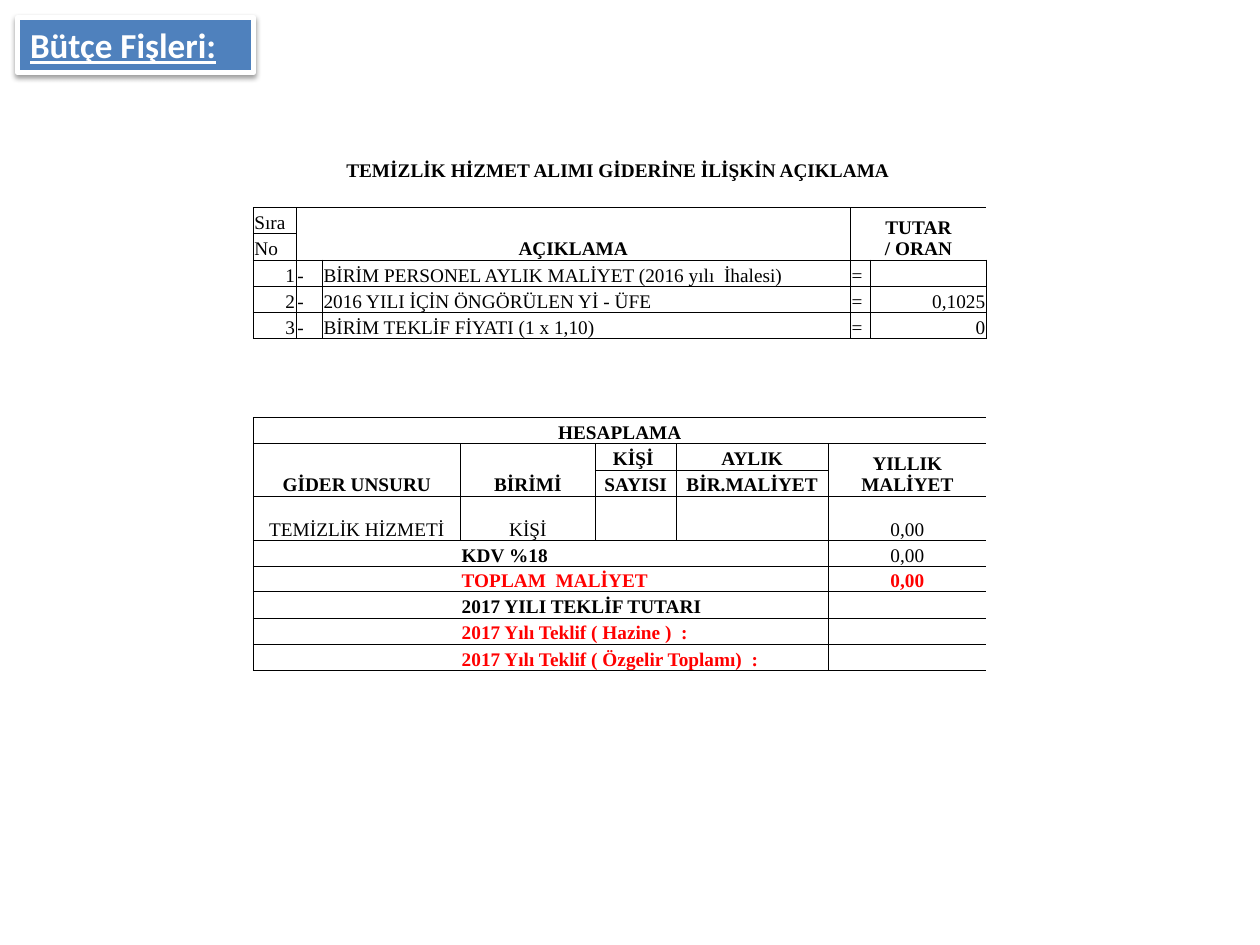
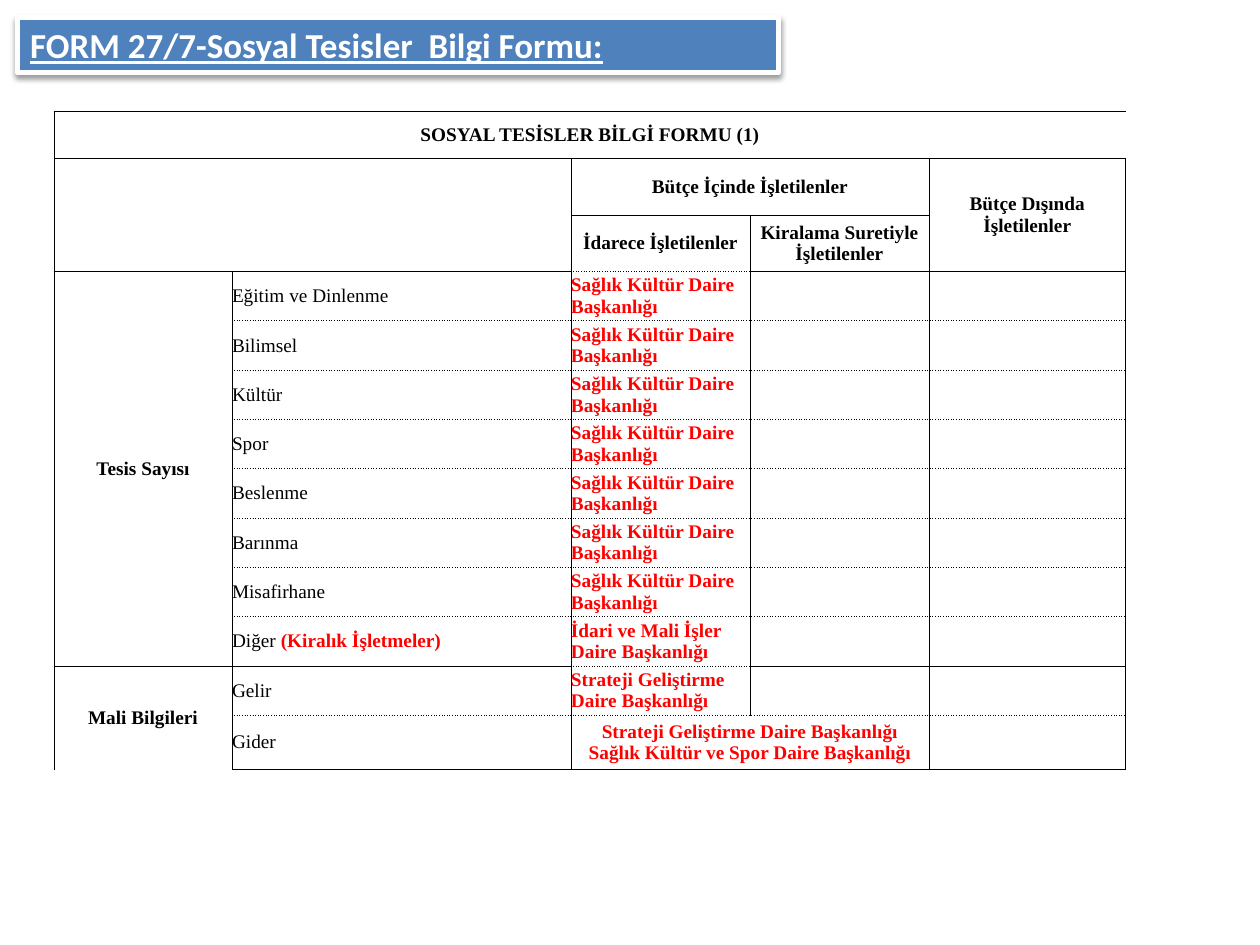
import lxml.etree
import pptx
import pptx.dml.color
import pptx.enum.text
import pptx.oxml
import pptx.oxml.ns
import pptx.util

Pt = pptx.util.Pt
qn = pptx.oxml.ns.qn
Align = pptx.enum.text.PP_ALIGN
Anchor = pptx.enum.text.MSO_ANCHOR

NO_GRID_STYLE = "{2D5ABB26-0587-4C30-8999-92F81FD0307C}"
BANNER_SHADOW = (
    '<a:effectLst %s><a:outerShdw blurRad="39370" dist="20320" dir="5400000" rotWithShape="0">'
    '<a:srgbClr val="000000"><a:alpha val="38000"/></a:srgbClr></a:outerShdw></a:effectLst>'
    % pptx.oxml.ns.nsdecls("a"))


def color(value):
    return pptx.dml.color.RGBColor.from_string(value)


class Page:
    """Holds the shared style, the current slide and its current table."""
    blue, white, black, red = "4F81BD", "FFFFFF", "000000", "FF0000"
    title_font, title_size = "Calibri", 20
    table_font, table_size = "Times New Roman", 11
    border_width = 0.5

    def __init__(self, deck):
        self.slide = deck.slides.add_slide(deck.slide_layouts[5])
        self.table = None
        self.anchor = Anchor.MIDDLE
        self.inset = 0

    def style(self, span, name, size, tint, bold):
        span.font.name = name
        span.font.size = Pt(size)
        span.font.bold = bold
        span.font.color.rgb = color(tint)

    def title(self, text, width):
        box = self.slide.shapes.title
        box.left, box.top, box.width, box.height = Pt(10), Pt(10), Pt(width), Pt(31.5)
        box.fill.solid()
        box.fill.fore_color.rgb = color(self.blue)
        box.line.color.rgb = color(self.white)
        box.line.width = Pt(3)
        box._element.spPr.append(pptx.oxml.parse_xml(BANNER_SHADOW))
        frame = box.text_frame
        frame.text = text
        frame.word_wrap = True
        frame.auto_size = pptx.enum.text.MSO_AUTO_SIZE.NONE
        frame.vertical_anchor = Anchor.TOP
        para = frame.paragraphs[0]
        para.alignment = Align.LEFT
        span = para.runs[0]
        self.style(span, self.title_font, self.title_size, self.white, True)
        span.font.underline = True

    def grid(self, left, top, widths, heights, anchor, inset):
        """Start a plain table without fills or borders."""
        self.anchor, self.inset = anchor, inset
        holder = self.slide.shapes.add_table(
            len(heights), len(widths), Pt(left), Pt(top), Pt(sum(widths)), Pt(sum(heights)))
        self.table = holder.table
        self.table.first_row = self.table.horz_banding = False
        self.table._tbl.tblPr.find(qn("a:tableStyleId")).text = NO_GRID_STYLE
        for column, width in zip(self.table.columns, widths):
            column.width = Pt(width)
        for row, height in zip(self.table.rows, heights):
            row.height = Pt(height)
        for cell in self.table.iter_cells():
            cell.fill.background()
            cell.vertical_anchor = anchor
            cell.margin_left = cell.margin_right = cell.margin_top = Pt(inset)
            cell.margin_bottom = 0
            end = lxml.etree.SubElement(cell.text_frame.paragraphs[0]._p, qn("a:endParaRPr"))
            end.set("sz", str(self.table_size * 100))

    def put(self, row, col, text="", rows=1, cols=1, align=Align.CENTER,
            bold=True, tint=black, framed=True):
        cell = self.table.cell(row, col)
        if rows * cols > 1:
            cell.merge(self.table.cell(row + rows - 1, col + cols - 1))
        if text:
            para = cell.text_frame.paragraphs[0]
            para.text = text
            para.alignment = align
            for span in para.runs:
                self.style(span, self.table_font, self.table_size, tint, bold)
        if framed:
            self.frame(row, col, rows, cols)
        return cell

    def frame(self, row, col, rows=1, cols=1, top="solid", bottom="solid"):
        """Draw the outer edges of a block of cells."""
        for r in range(row, row + rows):
            for c in range(col, col + cols):
                edges = (("L", c == col, "solid"), ("R", c == col + cols - 1, "solid"),
                         ("T", r == row, top), ("B", r == row + rows - 1, bottom))
                shown = [(side, dash) for side, outer, dash in edges if outer]
                self.border(self.table.cell(r, c), shown)

    def border(self, cell, edges):
        properties = cell._tc.get_or_add_tcPr()
        for place, (side, dash) in enumerate(edges):
            line = lxml.etree.Element(qn("a:ln" + side), w=str(Pt(self.border_width)))
            fill = lxml.etree.SubElement(line, qn("a:solidFill"))
            lxml.etree.SubElement(fill, qn("a:srgbClr"), val=self.black)
            lxml.etree.SubElement(line, qn("a:prstDash"), val=dash)
            properties.insert(place, line)


def budget_slip(deck):
    page = Page(deck)
    page.title("Bütçe Fişleri:", 135)
    widths = [24.5, 15, 79, 77, 46.2, 87, 12.7, 11.4, 66.3]
    heights = [15] * 13 + [25.2, 15.1, 14.1] + [15] * 4
    page.grid(144.7, 88.6, widths, heights, Anchor.BOTTOM, 0.7)

    page.put(0, 0, "TEMİZLİK HİZMET ALIMI GİDERİNE İLİŞKİN AÇIKLAMA ", cols=9, framed=False)
    for row, text in ((2, "Sıra"), (3, "No")):
        page.put(row, 0, text, align=Align.LEFT, bold=False, framed=False)
    page.frame(2, 0, rows=2)
    page.put(2, 1, "AÇIKLAMA", rows=2, cols=6)
    page.put(2, 7, "TUTAR\v/ ORAN", rows=2, cols=2)

    items = [("BİRİM PERSONEL AYLIK MALİYET (2016 yılı  İhalesi)", ""),
             ("2016 YILI İÇİN ÖNGÖRÜLEN Yİ - ÜFE", "0,1025"),
             ("BİRİM TEKLİF FİYATI (1 x 1,10)", "0")]
    for number, (item, amount) in enumerate(items, 1):
        row = number + 3
        page.put(row, 0, str(number), align=Align.RIGHT, bold=False)
        page.put(row, 1, "-", align=Align.LEFT, bold=False)
        page.put(row, 2, item, cols=5, align=Align.LEFT, bold=False)
        page.put(row, 7, "=", align=Align.LEFT, bold=False)
        page.put(row, 8, amount, align=Align.RIGHT, bold=False)

    page.put(10, 0, "HESAPLAMA", cols=9)
    page.put(11, 0, "GİDER UNSURU", rows=2, cols=3)
    page.put(11, 3, "BİRİMİ", rows=2)
    for col, words in ((4, ("KİŞİ ", "SAYISI")), (5, ("AYLIK", "BİR.MALİYET"))):
        for row, word in enumerate(words, 11):
            page.put(row, col, word, framed=False)
        page.frame(11, col, rows=2)
    page.put(11, 6, "YILLIK MALİYET", rows=2, cols=3)

    page.put(13, 0, "TEMİZLİK HİZMETİ", cols=3, bold=False)
    page.put(13, 3, "KİŞİ", bold=False)
    page.put(13, 4)
    page.put(13, 5)
    page.put(13, 6, "0,00", cols=3, bold=False)

    totals = [("KDV %18", "0,00", page.black, False),
              ("TOPLAM  MALİYET", "0,00", page.red, True),
              ("2017 YILI TEKLİF TUTARI", "", page.black, True),
              ("2017 Yılı Teklif ( Hazine )  :", "", page.red, True),
              ("2017 Yılı Teklif ( Özgelir Toplamı)  :", "", page.red, True)]
    for row, (label, amount, tint, bold) in enumerate(totals, 14):
        page.put(row, 3, label, cols=3, align=Align.LEFT, tint=tint, framed=False)
        page.frame(row, 0, cols=6)
        page.put(row, 6, amount, cols=3, bold=bold, tint=tint)


def facilities_form(deck):
    page = Page(deck)
    page.title("FORM 27/7-Sosyal Tesisler  Bilgi Formu:", 435)
    widths = [101.7, 193.7, 102.3, 102.3, 112.5]
    heights = [15, 27, 32.3, 32.3] + [28.2] * 9 + [31]
    page.grid(30.9, 48.6, widths, heights, Anchor.MIDDLE, 0)

    page.put(1, 0, "SOSYAL TESİSLER BİLGİ FORMU (1)", cols=5)
    page.put(2, 0, rows=2, cols=2)
    page.put(2, 2, "Bütçe İçinde İşletilenler", cols=2)
    page.put(2, 4, "Bütçe Dışında İşletilenler", rows=2)
    page.put(3, 2, "İdarece İşletilenler", framed=False)
    page.frame(3, 2, bottom="sysDot")
    page.put(3, 3, "Kiralama Suretiyle İşletilenler")
    page.put(4, 0, "Tesis Sayısı", rows=8)
    page.put(12, 0, "Mali Bilgileri", rows=2)

    health = "Sağlık Kültür Daire Başkanlığı"
    finance = "Strateji Geliştirme Daire Başkanlığı"
    kinds = ["Eğitim ve Dinlenme", "Bilimsel", "Kültür", "Spor", "Beslenme", "Barınma", "Misafirhane"]
    lines = [(kind, health) for kind in kinds]
    lines += [("Diğer ", "İdari ve Mali İşler Daire Başkanlığı"), ("Gelir", finance)]
    for row, (kind, office) in enumerate(lines, 4):
        cell = page.put(row, 1, kind, align=Align.LEFT, bold=False, framed=False)
        if kind == "Diğer ":
            span = cell.text_frame.paragraphs[0].add_run()
            span.text = "(Kiralık İşletmeler)"
            page.style(span, page.table_font, page.table_size, page.red, True)
        page.put(row, 2, office, align=Align.LEFT, tint=page.red, framed=False)
        page.frame(row, 2, top="sysDot", bottom="sysDot")
        for col in (1, 3, 4):
            page.frame(row, col, top="solid" if row in (4, 12) else "sysDot",
                       bottom="solid" if row == 11 else "sysDot")

    page.put(13, 1, "Gider", align=Align.LEFT, bold=False, framed=False)
    page.put(13, 2, finance + "\vSağlık Kültür ve Spor Daire Başkanlığı", cols=2,
             tint=page.red, framed=False)
    for col, cols in ((1, 1), (2, 2), (4, 1)):
        page.frame(13, col, cols=cols, top="sysDot")


def main():
    deck = pptx.Presentation()
    deck.slide_width, deck.slide_height = Pt(720), Pt(540)
    budget_slip(deck)
    facilities_form(deck)
    deck.save("out.pptx")


if __name__ == "__main__":
    main()
